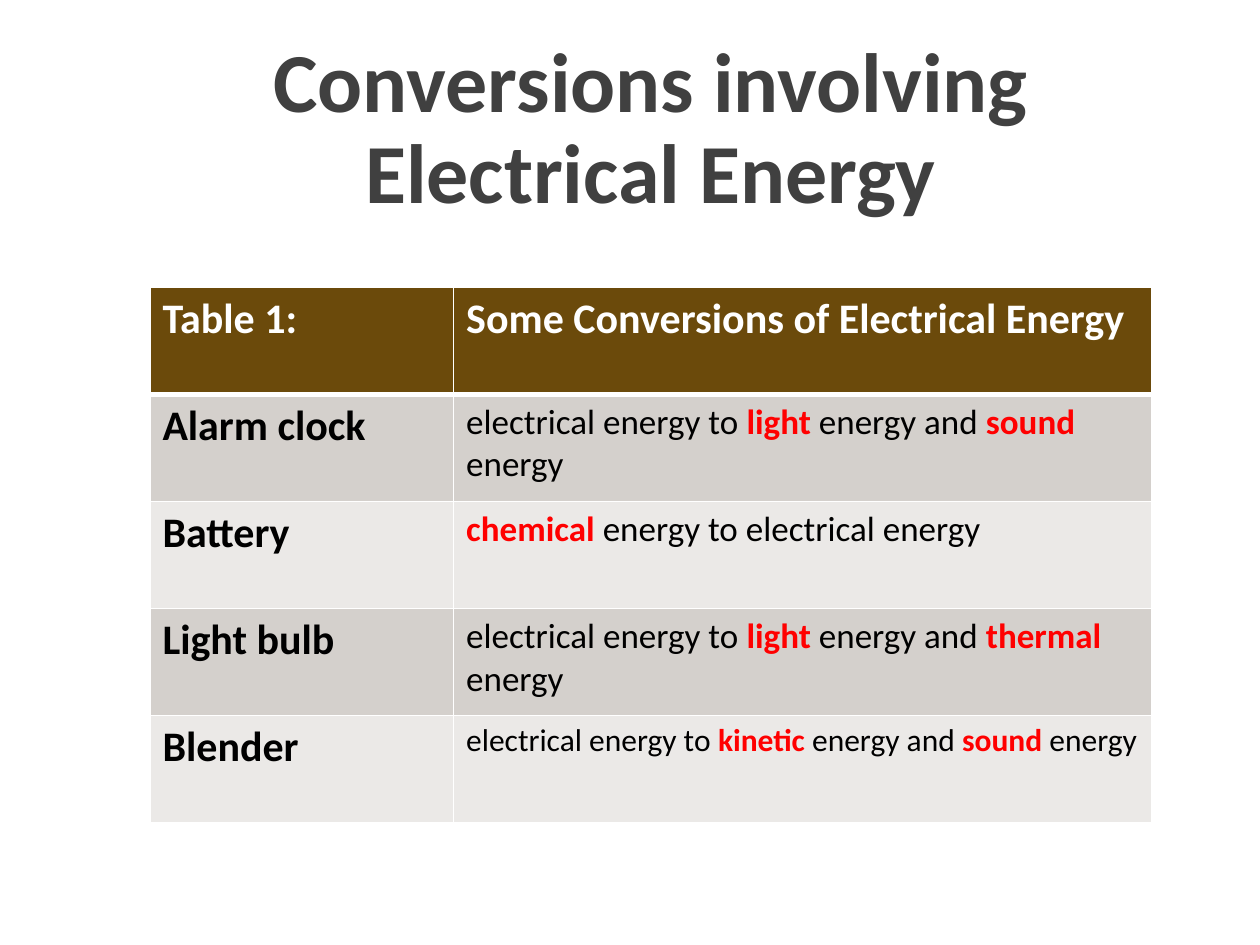
import pptx
import pptx.util
import pptx.dml.color
import pptx.enum.text
import pptx.oxml
import pptx.oxml.ns

Inches = pptx.util.Inches
Pt = pptx.util.Pt
RGBColor = pptx.dml.color.RGBColor

WHITE = RGBColor(0xFF, 0xFF, 0xFF)
BLACK = RGBColor(0x00, 0x00, 0x00)
RED = RGBColor(0xFF, 0x00, 0x00)
CHARCOAL = RGBColor(0x40, 0x40, 0x40)
BROWN = RGBColor(0x6B, 0x4A, 0x0B)
DARK_BAND = RGBColor(0xD4, 0xD0, 0xCC)
LIGHT_BAND = RGBColor(0xEB, 0xE9, 0xE7)

LEFT = Inches(1.19)
COLUMNS = [Inches(2.41), Inches(5.54)]
ROW_HEIGHT = Inches(0.85)

HEADER = ("Table 1:", "Some Conversions of Electrical Energy", 24)
CONVERSIONS = [
    ("Alarm clock", "electrical energy to |light| energy and |sound| energy", 20),
    ("Battery", "|chemical| energy to electrical energy", 20),
    ("Light bulb", "electrical energy to |light| energy and |thermal |energy", 20),
    ("Blender", "electrical energy to |kinetic |energy and |sound |energy", 18),
]


def add_span(para, text, size, color, bold):
    span = para.add_run()
    span.text = text
    span.font.name = "Calibri"
    span.font.size = Pt(size)
    span.font.bold = bold
    span.font.color.rgb = color


def add_borders(cell, bottom_width):
    properties = cell._tc.get_or_add_tcPr()
    widths = {"lnL": 1, "lnR": 1, "lnT": 1, "lnB": bottom_width}
    for position, (side, width) in enumerate(widths.items()):
        border = pptx.oxml.parse_xml(
            f'<a:{side} {pptx.oxml.ns.nsdecls("a")} w="{Pt(width)}">'
            f'<a:solidFill><a:srgbClr val="{WHITE}"/></a:solidFill></a:{side}>'
        )
        properties.insert(position, border)


deck = pptx.Presentation()
deck.slide_width = Inches(10)
deck.slide_height = Inches(7.5)
page = deck.slides.add_slide(deck.slide_layouts[5])

title = page.shapes.title
title.left, title.top = LEFT, Inches(0.3)
title.width, title.height = sum(COLUMNS), Inches(1.46)
title.text_frame.word_wrap = True
title.text_frame.auto_size = pptx.enum.text.MSO_AUTO_SIZE.NONE
title.text_frame.vertical_anchor = pptx.enum.text.MSO_ANCHOR.MIDDLE
heading = title.text_frame.paragraphs[0]
heading.alignment = pptx.enum.text.PP_ALIGN.CENTER
heading.line_spacing = Pt(52)
add_span(heading, "Conversions involving Electrical Energy", 48, CHARCOAL, True)

rows = [HEADER] + CONVERSIONS
table = page.shapes.add_table(
    len(rows), len(COLUMNS), LEFT, Inches(2.28), sum(COLUMNS), ROW_HEIGHT * len(rows)
).table
for column, width in zip(table.columns, COLUMNS):
    column.width = width

for index, (device, conversion, size) in enumerate(rows):
    is_header = index == 0
    table.rows[index].height = ROW_HEIGHT
    band = BROWN if is_header else DARK_BAND if index % 2 else LIGHT_BAND
    ink = WHITE if is_header else BLACK
    for cell in table.rows[index].cells:
        cell.fill.solid()
        cell.fill.fore_color.rgb = band
        add_borders(cell, 3 if is_header else 1)

    name_cell, conversion_cell = table.rows[index].cells
    add_span(name_cell.text_frame.paragraphs[0], device, 24, ink, True)
    para = conversion_cell.text_frame.paragraphs[0]
    for part, text in enumerate(conversion.split("|")):
        is_key = part % 2 == 1
        if text:
            add_span(para, text, size, RED if is_key else ink, is_key or is_header)

deck.save("out.pptx")
